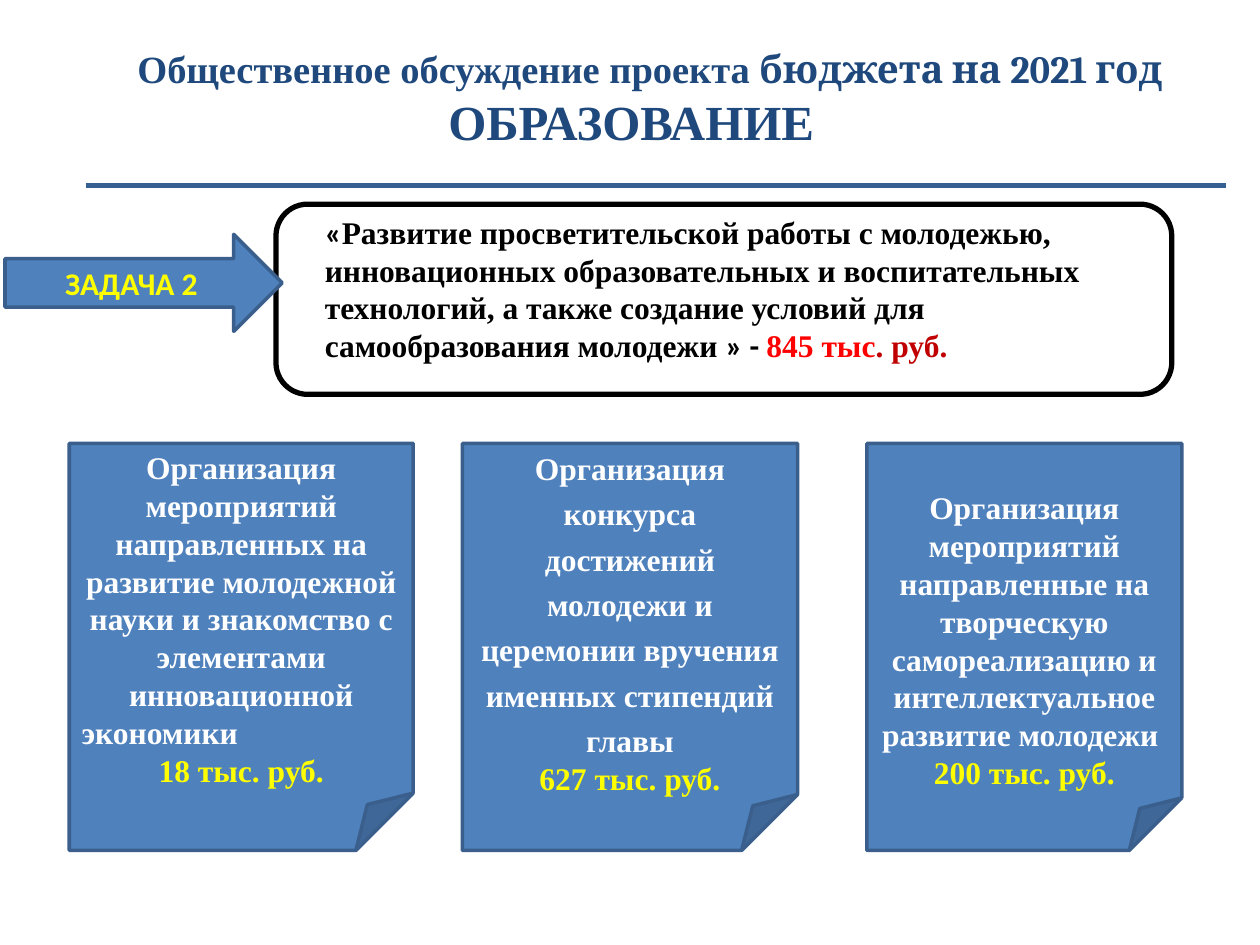
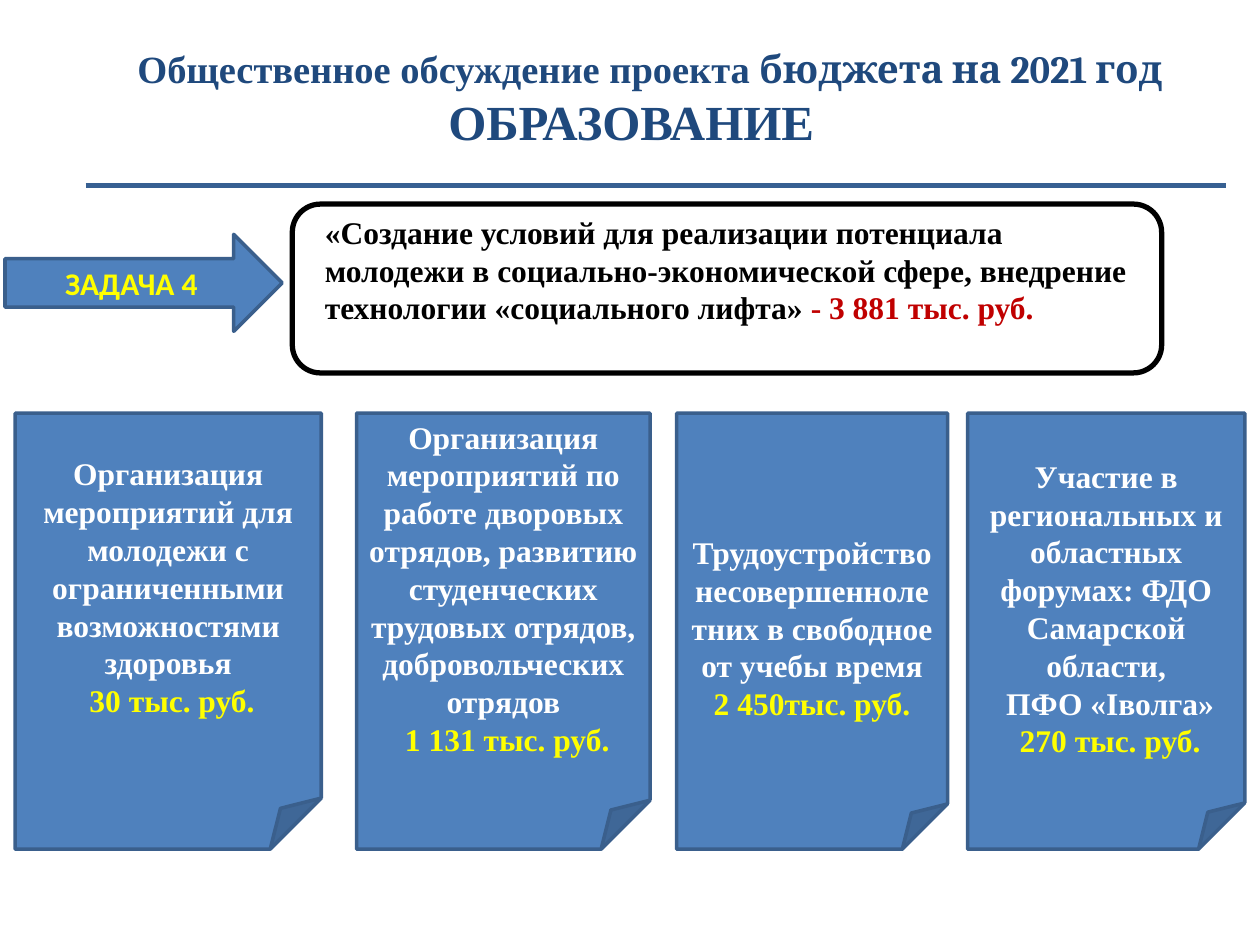
from lxml.etree import SubElement
from pptx import Presentation
from pptx.dml.color import RGBColor
from pptx.enum.shapes import MSO_CONNECTOR, MSO_SHAPE as SHAPE
from pptx.enum.text import MSO_ANCHOR as ANCHOR, PP_ALIGN as ALIGN
from pptx.oxml.ns import qn
from pptx.util import Inches, Pt

COLUMNS, ROWS = 100, 75
SERIF, SANS, HEADING = "Times New Roman", "Calibri", "Cambria"
BLACK, WHITE, YELLOW = "000000", "FFFFFF", "FFFF00"
NAVY, BLUE, EDGE, RULE = "1F497D", "4F81BD", "3A5F8C", "376092"
RED, DARK_RED = "FF0000", "C00000"
PAD_X, PAD_Y, BLANK_LINE = 1, 0.5, 3


def rgb(code):
    return RGBColor.from_string(code)


class BudgetDeck:
    """Hold the style and the current slide of the budget deck."""

    def __init__(self):
        self.deck = Presentation()
        self.deck.slide_width, self.deck.slide_height = Inches(10), Inches(7.5)
        self.slide = None

    def x(self, columns):
        return round(self.deck.slide_width * columns / COLUMNS)

    def y(self, rows):
        return round(self.deck.slide_height * rows / ROWS)

    def area(self, left, top, width, height):
        return self.x(left), self.y(top), self.x(width), self.y(height)

    def new_slide(self):
        self.slide = self.deck.slides.add_slide(self.deck.slide_layouts[6])

    def fill_text(self, frame, paragraphs, align=ALIGN.CENTER, anchor=ANCHOR.MIDDLE,
                  color=WHITE, above=0, below=0):
        frame.word_wrap = True
        frame.vertical_anchor = anchor
        frame.margin_left = frame.margin_right = self.x(PAD_X)
        frame.margin_top = self.y(PAD_Y + above)
        frame.margin_bottom = self.y(PAD_Y + below)
        for number, runs in enumerate(paragraphs):
            paragraph = frame.paragraphs[0] if number == 0 else frame.add_paragraph()
            paragraph.alignment = align
            for words, style in runs:
                run = paragraph.add_run()
                run.text = words
                run.font.name = style.get("font", SERIF)
                run.font.size = Pt(style.get("size", 18))
                run.font.bold = True
                run.font.color.rgb = rgb(style.get("color", color))
        return frame.paragraphs

    def text(self, place, paragraphs, **options):
        frame = self.slide.shapes.add_textbox(*self.area(*place)).text_frame
        return self.fill_text(frame, paragraphs, **options)

    def shape(self, kind, place, edge=EDGE, weight=2, fill=BLUE):
        shape = self.slide.shapes.add_shape(kind, *self.area(*place))
        shape.shadow.inherit = False
        if fill:
            shape.fill.solid()
            shape.fill.fore_color.rgb = rgb(fill)
        else:
            shape.fill.background()
        shape.line.color.rgb = rgb(edge)
        shape.line.width = Pt(weight)
        return shape

    def title(self):
        heading = self.text((5.1, 1.7, 90, 12.1), [[
            ("Общественное обсуждение проекта ", {"size": 22}),
            ("бюджета на 2021 год ", {"size": 22, "font": HEADING}),
            ("ОБРАЗОВАНИЕ", {"size": 28}),
        ]], color=NAVY)
        heading[0]._p.get_or_add_pPr().set("indent", str(self.x(3)))

    def rule(self):
        rule = self.slide.shapes.add_connector(
            MSO_CONNECTOR.STRAIGHT, self.x(6.8), self.y(14.7), self.x(97.3), self.y(14.7))
        rule.line.color.rgb = rgb(RULE)
        rule.line.width = Pt(3)
        SubElement(rule._element.spPr, qn("a:effectLst"))

    def goal(self, frame_place, text_place, runs):
        self.shape(SHAPE.ROUNDED_RECTANGLE, frame_place, BLACK, 3, None)
        self.text(text_place, [runs], align=ALIGN.LEFT, anchor=ANCHOR.TOP, color=BLACK)

    def task(self, number):
        arrow = self.shape(SHAPE.RIGHT_ARROW, (0.4, 18.6, 22, 7.7))
        label = (f"ЗАДАЧА {number}", {"font": SANS})
        self.fill_text(arrow.text_frame, [[label]], color=YELLOW)

    def measure(self, place, lines, cost, above=0, below=0):
        card = self.shape(SHAPE.FOLDED_CORNER, place)
        paragraphs = [[(line, {})] for line in lines] + [[(cost, {"color": YELLOW})]]
        return self.fill_text(card.text_frame, paragraphs, above=above, below=below)

    def task_slide(self, number, goal, top, height, measures):
        self.new_slide()
        self.goal(*goal)
        cards = [self.measure((left, top, width, height), *content)
                 for left, width, *content in measures]
        self.task(number)
        self.rule()
        self.title()
        return cards


def main():
    budget = BudgetDeck()
    science, contest, _ = budget.task_slide(
        2,
        ((21.9, 16.2, 71.1, 15.1), (24.8, 16.4, 67.4, 13.1), [
            ("«", {"font": SANS}),
            ("Развитие просветительской работы с молодежью, инновационных "
             "образовательных и воспитательных технологий, а также создание "
             "условий для самообразования молодежи ", {}),
            ("» - ", {"font": SANS}),
            ("845 тыс", {"color": RED}),
            (". руб.", {"color": DARK_RED}),
        ]),
        35.2, 32.3,
        [
            (5.5, 27.3, ["Организация мероприятий направленных на развитие молодежной "
                         "науки и знакомство с элементами инновационной", "экономики"],
             "18 тыс. руб."),
            (36.7, 26.6, ["Организация конкурса достижений молодежи и церемонии "
                          "вручения именных стипендий главы"], "627 тыс. руб."),
            (68.8, 25, ["Организация мероприятий направленные на творческую "
                        "самореализацию и интеллектуальное развитие молодежи "],
             "200 тыс. руб.", BLANK_LINE),
        ])
    science[1].alignment = ALIGN.LEFT
    contest[0].line_spacing = 1.2

    budget.task_slide(
        4,
        ((23.2, 16.2, 69, 13.4), (24.8, 16.4, 66.6, 10.1), [
            ("«Создание условий для реализации потенциала молодежи в "
             "социально-экономической сфере, внедрение технологии "
             "«социального лифта» ", {}),
            ("- 3 881 тыс. руб.", {"color": DARK_RED}),
        ]),
        32.8, 34.6,
        [
            (1.2, 24.3, ["Организация мероприятий для молодежи с ограниченными "
                         "возможностями здоровья"], " 30 тыс. руб.", 0, BLANK_LINE),
            (28.3, 23.3, ["Организация мероприятий по работе дворовых отрядов, развитию "
                          "студенческих трудовых отрядов, добровольческих отрядов"],
             " 1 131 тыс. руб.", 0, BLANK_LINE),
            (53.7, 21.5, ["Трудоустройство несовершеннолетних в свободное от учебы время"],
             "2 450тыс. руб.", BLANK_LINE),
            (76.8, 22, ["Участие в региональных и областных форумах: ФДО Самарской "
                        "области,", " ПФО «Iволга»"], " 270 тыс. руб."),
        ])
    budget.deck.save("out.pptx")


if __name__ == "__main__":
    main()
